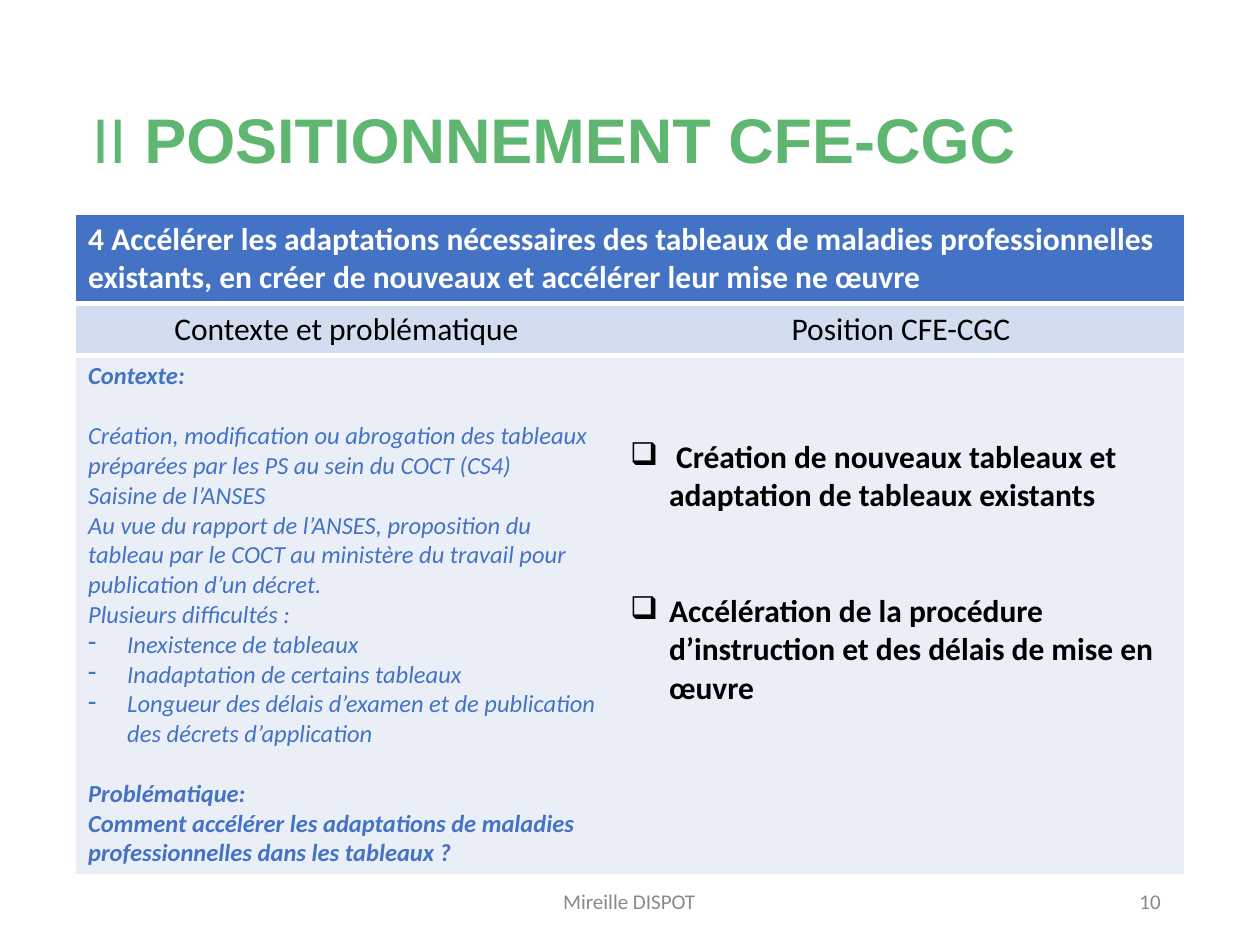
import dataclasses
import typing

import pptx
import pptx.dml.color
import pptx.enum.text
import pptx.oxml
import pptx.oxml.ns
import pptx.util

Inches = pptx.util.Inches
Pt = pptx.util.Pt
Align = pptx.enum.text.PP_ALIGN
Anchor = pptx.enum.text.MSO_ANCHOR


@dataclasses.dataclass(frozen=True)
class Theme:
    title_font: str = "Arial"
    body_font: str = "Calibri"
    green: str = "5FB670"
    blue: str = "4472C4"
    heading_fill: str = "D2DEEF"
    body_fill: str = "EAEFF7"
    white: str = "FFFFFF"
    black: str = "000000"
    grey: str = "898989"
    title_size: int = 36
    heading_size: int = 18
    body_size: int = 14
    footer_size: int = 12


THEME = Theme()


@dataclasses.dataclass(frozen=True)
class Style:
    size: int
    color: str
    bold: bool = False
    italic: bool = False
    font: str = THEME.body_font


@dataclasses.dataclass(frozen=True)
class Line:
    runs: tuple[tuple[str, Style], ...]
    align: Align = Align.LEFT
    bullet: str = ""
    before: float = 0
    spacing: float = 1.0


@dataclasses.dataclass(frozen=True)
class TextBox:
    left: float
    top: float
    width: float
    height: float
    line: Line
    margin_top: float = 0.05


@dataclasses.dataclass(frozen=True)
class Cell:
    row: int
    column: int
    fill: str
    lines: tuple[Line, ...]
    borders: dict[str, float]
    margin_top: float = 0.05


def apply(target: typing.Any, values: dict[str, typing.Any]) -> None:
    for name, value in values.items():
        setattr(target, name, value)


def write_lines(frame: typing.Any, lines: tuple[Line, ...]) -> None:
    for index, line in enumerate(lines):
        paragraph = frame.paragraphs[0] if index == 0 else frame.add_paragraph()
        apply(paragraph, {"alignment": line.align, "line_spacing": line.spacing,
                          "space_before": Pt(line.before)})
        if line.bullet:
            properties = paragraph._p.get_or_add_pPr()
            properties.set("marL", str(Inches(0.31)))
            properties.set("indent", str(-Inches(0.31)))
            bullet = pptx.oxml.parse_xml(
                f'<a:buChar {pptx.oxml.ns.nsdecls("a")} char="{line.bullet}"/>')
            properties.append(bullet)
        for text, style in line.runs:
            run = paragraph.add_run()
            run.text = text
            apply(run.font, {"name": style.font, "size": Pt(style.size),
                             "bold": style.bold, "italic": style.italic})
            run.font.color.rgb = pptx.dml.color.RGBColor.from_string(style.color)


def draw_text_box(slide: typing.Any, box: TextBox) -> None:
    shape = slide.shapes.add_textbox(
        Inches(box.left), Inches(box.top), Inches(box.width), Inches(box.height))
    apply(shape.text_frame, {"word_wrap": True, "vertical_anchor": Anchor.MIDDLE,
                             "margin_top": Inches(box.margin_top)})
    write_lines(shape.text_frame, (box.line,))


def draw_cell(table: typing.Any, content: Cell) -> None:
    cell = table.cell(content.row, content.column)
    properties = cell._tc.get_or_add_tcPr()
    for side, width in content.borders.items():
        properties.append(pptx.oxml.parse_xml(
            f'<a:ln{side} {pptx.oxml.ns.nsdecls("a")} w="{Pt(width)}"><a:solidFill>'
            f'<a:srgbClr val="{THEME.white}"/></a:solidFill></a:ln{side}>'))
    cell.fill.solid()
    cell.fill.fore_color.rgb = pptx.dml.color.RGBColor.from_string(content.fill)
    cell.margin_top = Inches(content.margin_top)
    write_lines(cell.text_frame, content.lines)


def draw_table(slide: typing.Any, cells: tuple[Cell, ...]) -> None:
    widths = (4.3, 4.5)
    heights = (0.7, 0.41, 4.12)
    frame = slide.shapes.add_table(
        len(heights), len(widths), Inches(0.6), Inches(1.7),
        Inches(sum(widths)), Inches(sum(heights)))
    table = frame.table
    apply(table, {"first_row": False, "horz_banding": False})
    no_style = "{2D5ABB26-0587-4C30-8999-92F81FD0307C}"
    table._tbl.tblPr.find(pptx.oxml.ns.qn("a:tableStyleId")).text = no_style
    for column, width in zip(table.columns, widths):
        column.width = Inches(width)
    for row, height in zip(table.rows, heights):
        row.height = Inches(height)
    table.cell(0, 0).merge(table.cell(0, 1))
    for cell in cells:
        draw_cell(table, cell)


TITLE = Style(THEME.title_size, THEME.green, font=THEME.title_font)
TITLE_BOLD = dataclasses.replace(TITLE, bold=True)
HEADER = Style(THEME.heading_size, THEME.white, bold=True)
HEADING = Style(THEME.heading_size, THEME.black)
POSITION = dataclasses.replace(HEADING, bold=True)
CONTEXT = Style(THEME.body_size, THEME.blue, italic=True)
CONTEXT_BOLD = dataclasses.replace(CONTEXT, bold=True)
FOOTER = Style(THEME.footer_size, THEME.grey)
CONTEXT_GAP = 17
POSITION_GAP = 44


def line(text: str, style: Style, **options: typing.Any) -> Line:
    return Line(((text, style),), **options)


CONTEXT_LINES = (
    line("Contexte:", CONTEXT_BOLD),
    line("Création, modification ou abrogation des tableaux préparées par les PS "
         "au sein du COCT (CS4)", CONTEXT, before=CONTEXT_GAP),
    line("Saisine de l’ANSES", CONTEXT),
    line("Au vue du rapport de l’ANSES, proposition du tableau par le COCT au "
         "ministère du travail pour publication d’un décret.", CONTEXT),
    line("Plusieurs difficultés :", CONTEXT),
    line("Inexistence de tableaux", CONTEXT, bullet="-"),
    line("Inadaptation de certains tableaux", CONTEXT, bullet="-"),
    line("Longueur des délais d’examen et de publication des décrets "
         "d’application", CONTEXT, bullet="-"),
    line("Problématique:", CONTEXT_BOLD, before=CONTEXT_GAP),
    line("Comment accélérer les adaptations de maladies professionnelles dans les "
         "tableaux ?", CONTEXT_BOLD),
)
POSITION_LINES = (
    line(" Création de nouveaux tableaux et adaptation de tableaux existants",
         POSITION, bullet="❑"),
    line("Accélération de la procédure d’instruction et des délais de mise en œuvre",
         POSITION, bullet="❑", before=POSITION_GAP),
)
CELLS = (
    Cell(0, 0, THEME.blue, (
        line("4 Accélérer les adaptations nécessaires des tableaux de maladies "
             "professionnelles existants, en créer de nouveaux et accélérer leur "
             "mise ne œuvre", HEADER),), {"L": 1, "R": 1, "T": 1, "B": 3}),
    Cell(1, 0, THEME.heading_fill, (
        line("Contexte et problématique", HEADING, align=Align.CENTER),),
        {"L": 1, "T": 3}),
    Cell(1, 1, THEME.heading_fill, (
        line("Position CFE-CGC", HEADING, align=Align.CENTER),), {"R": 1, "T": 3}),
    Cell(2, 0, THEME.body_fill, CONTEXT_LINES, {"L": 1, "B": 1}),
    Cell(2, 1, THEME.body_fill, POSITION_LINES, {"R": 1, "B": 1}, margin_top=0.66),
)
TEXT_BOXES = (
    TextBox(0.63, 0.15, 8.62, 1.45, Line(
        (("II ", TITLE), ("POSITIONNEMENT CFE-CGC", TITLE_BOLD)), spacing=0.9),
        margin_top=0.57),
    TextBox(3.31, 6.95, 3.37, 0.4,
            line("Mireille DISPOT", FOOTER, align=Align.CENTER)),
    TextBox(7.06, 6.95, 2.25, 0.4, line("10", FOOTER, align=Align.RIGHT)),
)


def main() -> None:
    presentation = pptx.Presentation()
    apply(presentation, {"slide_width": Inches(10), "slide_height": Inches(7.5)})
    slide = presentation.slides.add_slide(presentation.slide_layouts[6])
    draw_table(slide, CELLS)
    for box in TEXT_BOXES:
        draw_text_box(slide, box)
    presentation.save("out.pptx")


if __name__ == "__main__":
    main()
